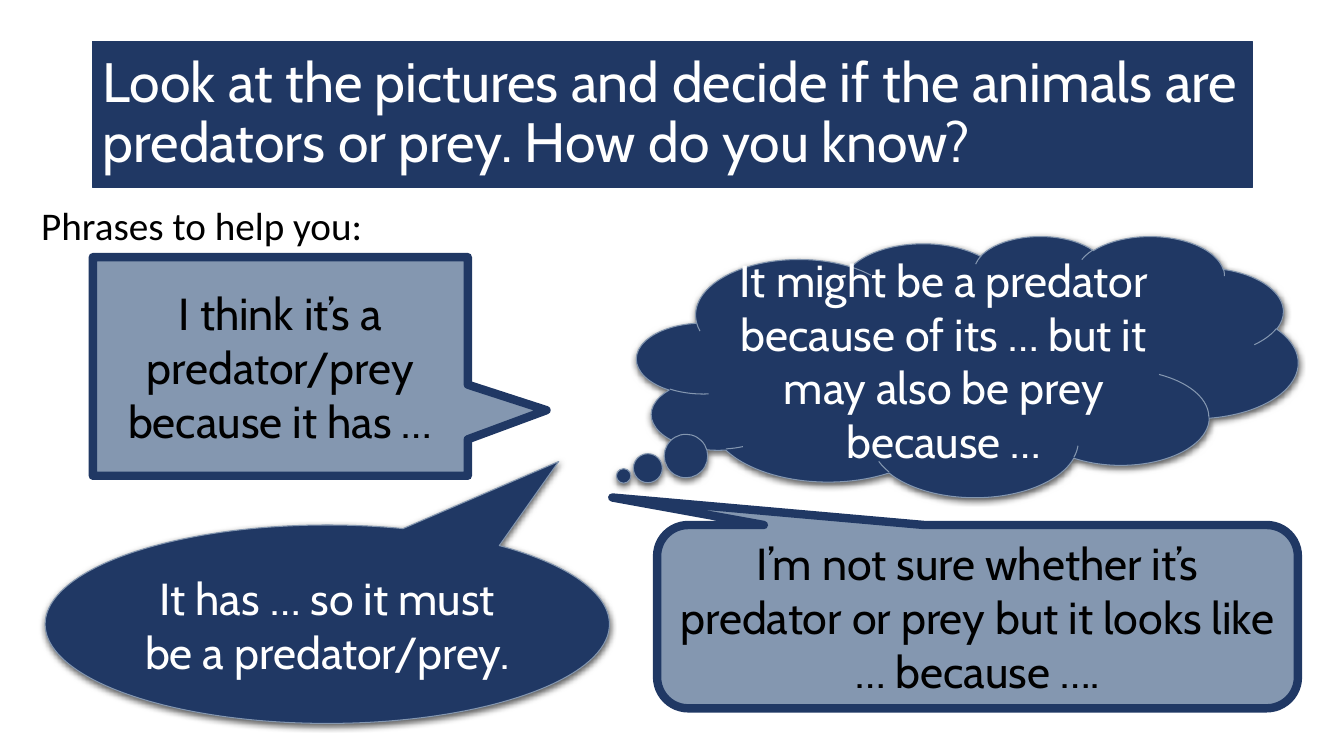
"""Build a slide of speech-bubble phrases for discussing predators and prey."""
from dataclasses import dataclass

from lxml import etree
from pptx import Presentation
from pptx.dml.color import RGBColor
from pptx.enum.shapes import MSO_SHAPE
from pptx.enum.text import MSO_ANCHOR, PP_ALIGN
from pptx.oxml.ns import qn
from pptx.shapes.autoshape import Shape
from pptx.util import Cm, Pt

RECT = MSO_SHAPE.RECTANGLE
RECT_CALLOUT = MSO_SHAPE.RECTANGULAR_CALLOUT
OVAL_CALLOUT = MSO_SHAPE.OVAL_CALLOUT
CLOUD_CALLOUT = MSO_SHAPE.CLOUD_CALLOUT
ROUND_CALLOUT = MSO_SHAPE.ROUNDED_RECTANGULAR_CALLOUT
TOP, MIDDLE = MSO_ANCHOR.TOP, MSO_ANCHOR.MIDDLE
LEFT, CENTER = PP_ALIGN.LEFT, PP_ALIGN.CENTER

NAVY, SLATE, WHITE, BLACK = "203864", "8497B0", "FFFFFF", "000000"


@dataclass(frozen=True)
class Style:
    """Colours, outline width and shadow of a filled shape."""
    fill: str
    line: str
    width: float
    text: str
    shadow: bool = False


@dataclass(frozen=True)
class Bubble:
    """A phrase with its outline, place in centimetres and pointer."""
    phrase: str
    outline: MSO_SHAPE
    place: tuple[float, float, float, float]
    pointer: tuple[float, ...]
    style: Style


HEADING = Style(NAVY, NAVY, 0.5, WHITE)
FRAMED = Style(SLATE, NAVY, 6, BLACK)
RAISED = Style(NAVY, SLATE, 0.75, WHITE, shadow=True)

BUBBLES = (
    Bubble("I think it’s a predator/prey because it has …", RECT_CALLOUT,
           (2.34, 6.48, 9.45, 5.51), (0.71, 0.2), FRAMED),
    Bubble("It has … so it must be a predator/prey.", OVAL_CALLOUT,
           (1.14, 13.23, 14.22, 5), (0.41, -0.82), RAISED),
    Bubble("It might be a predator because of its … but it may also be prey because …",
           CLOUD_CALLOUT, (16.05, 5.94, 16.66, 6.58), (-0.52, 0.42), RAISED),
    Bubble("I’m not sure whether it’s predator or prey but it looks like … because ….",
           ROUND_CALLOUT, (16.56, 13.23, 16.15, 4.62), (-0.57, -0.65, 0.17), FRAMED),
)


def colour(value: str) -> RGBColor:
    """Turn a hex string into a colour."""
    return RGBColor.from_string(value)


def write(shape: Shape, text: str, text_colour: str, font: dict,
          paragraph_format: dict, anchor: MSO_ANCHOR = MIDDLE) -> None:
    """Put one formatted paragraph into a shape."""
    frame = shape.text_frame
    frame.word_wrap = True
    frame.vertical_anchor = anchor
    paragraph = frame.paragraphs[0]
    for name, value in paragraph_format.items():
        setattr(paragraph, name, value)
    run = paragraph.add_run()
    run.text = text
    for name, value in font.items():
        setattr(run.font, name, value)
    run.font.color.rgb = colour(text_colour)


def add_shadow(shape: Shape) -> None:
    """Give a shape a soft shadow straight below it."""
    effects = shape._element.spPr.find(qn("a:effectLst"))
    shadow = etree.SubElement(effects, qn("a:outerShdw"), blurRad=str(Pt(4.5)),
                              dist=str(Pt(1.5)), dir="5400000", rotWithShape="0")
    tint = etree.SubElement(shadow, qn("a:srgbClr"), val=BLACK)
    etree.SubElement(tint, qn("a:alpha"), val="63000")


def add_filled(shapes, outline: MSO_SHAPE, place: tuple[float, ...], style: Style) -> Shape:
    """Add a preset shape in the given style."""
    shape = shapes.add_shape(outline, *map(Cm, place))
    shape.shadow.inherit = False
    shape.fill.solid()
    shape.fill.fore_color.rgb = colour(style.fill)
    shape.line.color.rgb = colour(style.line)
    shape.line.width = Pt(style.width)
    if style.shadow:
        add_shadow(shape)
    return shape


def add_bubble(shapes, bubble: Bubble) -> None:
    """Add a callout with its pointer and phrase."""
    callout = add_filled(shapes, bubble.outline, bubble.place, bubble.style)
    for index, value in enumerate(bubble.pointer):
        callout.adjustments[index] = value
    write(callout, bubble.phrase, bubble.style.text,
          {"name": "Cabin", "size": Pt(32)}, {"alignment": CENTER})


def main() -> None:
    """Build and save the slide."""
    deck = Presentation()
    deck.slide_width, deck.slide_height = Cm(33.87), Cm(19.05)
    shapes = deck.slides.add_slide(deck.slide_layouts[6]).shapes

    question = add_filled(shapes, RECT, (2.34, 1.04, 29.21, 3.68), HEADING)
    write(question, "Look at the pictures and decide if the animals are predators or prey. "
          "How do you know?", HEADING.text, {"name": "Cabin", "size": Pt(39.6)},
          {"alignment": LEFT, "line_spacing": 0.9})

    prompt = shapes.add_textbox(*map(Cm, (0.79, 5.08, 32.69, 13.18)))
    write(prompt, "Phrases to help you:", BLACK, {"name": "Calibri", "size": Pt(28)},
          {"alignment": LEFT, "line_spacing": 0.9, "space_before": Pt(10)}, TOP)

    for bubble in BUBBLES:
        add_bubble(shapes, bubble)
    deck.save("out.pptx")


if __name__ == "__main__":
    main()
